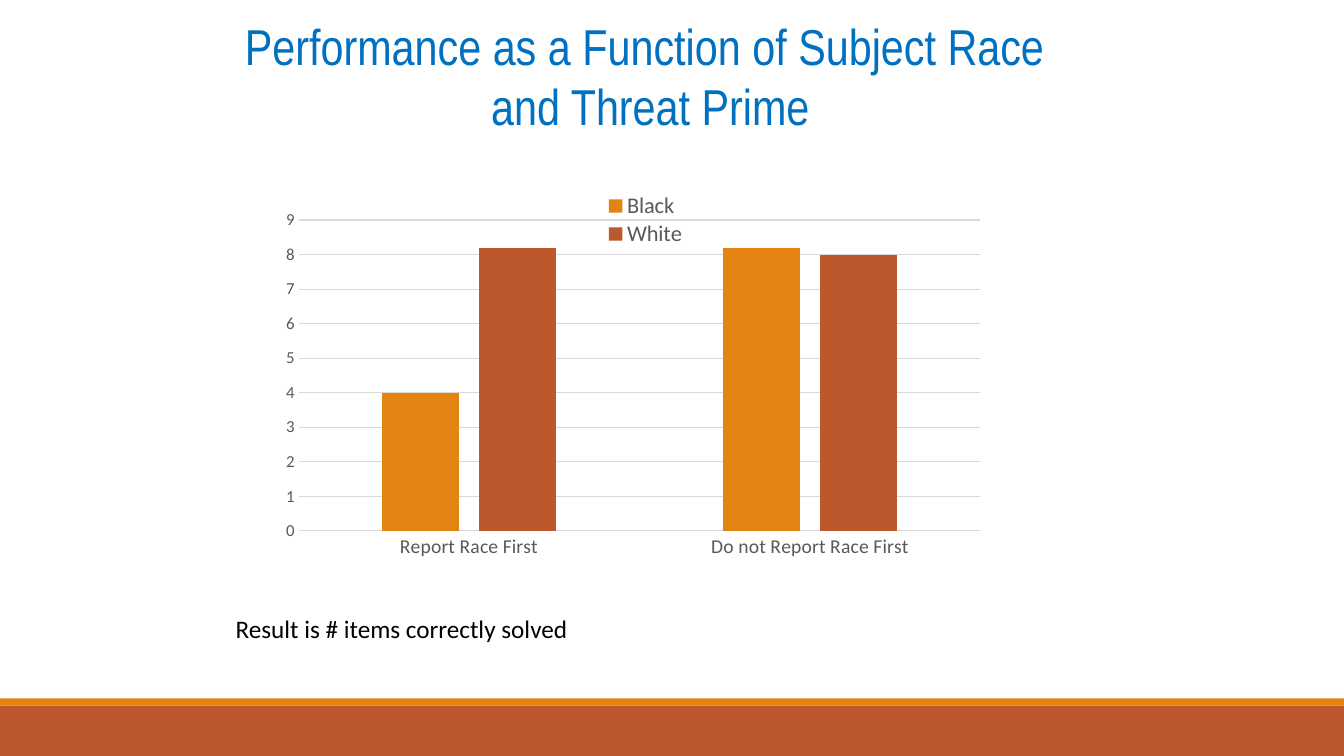
from lxml.etree import SubElement
from pptx import Presentation
from pptx.chart.data import CategoryChartData
from pptx.dml.color import RGBColor
from pptx.enum.chart import XL_CHART_TYPE, XL_LEGEND_POSITION, XL_TICK_MARK
from pptx.enum.shapes import MSO_SHAPE
from pptx.enum.text import MSO_ANCHOR, MSO_AUTO_SIZE, PP_ALIGN
from pptx.oxml.ns import qn
from pptx.util import Cm, Pt

ORANGE, RUST, GREY, GRID = "E48312", "BD582C", "595959", "D9D9D9"
WIDTH, HEIGHT = 33.87, 19.05
CATEGORIES = ["Report Race First", "Do not Report Race First"]
SERIES = [("Black", (4, 8.2), ORANGE), ("White", (8.2, 8), RUST)]


def rgb(code):
    """Turn a hex string into a colour."""
    return RGBColor.from_string(code)


def style(font, size, color, name="Calibri"):
    """Format a font."""
    font.color.rgb = rgb(color)
    for key, value in {"size": Pt(size), "name": name, "bold": False}.items():
        setattr(font, key, value)


def set_frame(tf, anchor):
    """Give a text frame wrapping and its anchor."""
    values = {"word_wrap": True, "auto_size": MSO_AUTO_SIZE.NONE,
              "vertical_anchor": anchor}
    for key, value in values.items():
        setattr(tf, key, value)


def set_layout(element, index, box, inner=False):
    """Place a chart part at fractions of the chart area."""
    old = element.find(qn("c:layout"))
    if old is not None:
        element.remove(old)
    layout = SubElement(element, qn("c:layout"))
    element.insert(index, layout)
    manual = SubElement(layout, qn("c:manualLayout"))
    values = [("layoutTarget", "inner")] if inner else []
    values += [("xMode", "edge"), ("yMode", "edge"), *zip("xywh", box)]
    for tag, value in values:
        SubElement(manual, qn(f"c:{tag}")).set("val", str(value))


def add_title(s, x, y, w, h):
    """Fill the title placeholder with two centred lines."""
    sp = s.shapes.title
    for key, value in {"left": x, "top": y, "width": w, "height": h}.items():
        setattr(sp, key, Cm(value))
    tf = sp.text_frame
    tf.text = "Performance as a Function of Subject Race \nand Threat Prime"
    set_frame(tf, MSO_ANCHOR.TOP)
    for p in tf.paragraphs:
        p.alignment = PP_ALIGN.CENTER
        style(p.runs[0].font, 36, "0070C0", "Arial Narrow")


def add_score_chart(s, x, y, w, h):
    """Add the clustered columns with axes and legend."""
    data = CategoryChartData(number_format="General")
    data.categories = CATEGORIES
    for name, values, _ in SERIES:
        data.add_series(name, values)
    chart = s.shapes.add_chart(XL_CHART_TYPE.COLUMN_CLUSTERED,
                               Cm(x), Cm(y), Cm(w), Cm(h), data).chart
    chart.has_title = False
    style(chart.font, 10, "000000")
    plot = chart.plots[0]
    for key, value in {"gap_width": 219, "overlap": -27,
                       "vary_by_categories": False}.items():
        setattr(plot, key, value)
    for series, (_, _, color) in zip(plot.series, SERIES):
        series.format.fill.solid()
        series.format.fill.fore_color.rgb = rgb(color)
    cat, val = chart.category_axis, chart.value_axis
    for axis, size in ((cat, 14), (val, 12)):
        axis.major_tick_mark = axis.minor_tick_mark = XL_TICK_MARK.NONE
        style(axis.tick_labels.font, size, GREY)
    for key, value in {"minimum_scale": 0, "maximum_scale": 9, "major_unit": 1,
                       "has_major_gridlines": True}.items():
        setattr(val, key, value)
    val.format.line.fill.background()
    for line in (cat.format.line, val.major_gridlines.format.line):
        line.color.rgb = rgb(GRID)
        line.width = Pt(0.75)
    chart.has_legend = True
    legend = chart.legend
    legend.position = XL_LEGEND_POSITION.BOTTOM
    legend.include_in_layout = False
    style(legend.font, 16, GREY)
    set_layout(legend._element, 1, (0.45, 0.05, 0.12, 0.14))
    plot_area = chart._chartSpace.chart.plotArea
    set_layout(plot_area, 0, (0.036, 0.12, 0.932, 0.767), inner=True)


def add_note(s, x, y, w, h):
    """Add the line that explains the measure."""
    tf = s.shapes.add_textbox(Cm(x), Cm(y), Cm(w), Cm(h)).text_frame
    set_frame(tf, MSO_ANCHOR.TOP)
    r = tf.paragraphs[0].add_run()
    r.text = "Result is # items correctly solved"
    style(r.font, 18, "000000")


def add_footer(s, x, y, w, h):
    """Add the thin orange strip above the rust band."""
    strip = 0.18
    for top, height, color in ((y + strip, h - strip, RUST), (y, strip, ORANGE)):
        sp = s.shapes.add_shape(MSO_SHAPE.RECTANGLE,
                                Cm(x), Cm(top), Cm(w), Cm(height))
        sp.shadow.inherit = False
        sp.fill.solid()
        sp.fill.fore_color.rgb = rgb(color)
        sp.line.fill.background()


def main():
    """Build the slide and save it."""
    prs = Presentation()
    prs.slide_width, prs.slide_height = Cm(WIDTH), Cm(HEIGHT)
    s = prs.slides.add_slide(prs.slide_layouts[5])
    add_footer(s, 0, 17.6, WIDTH, HEIGHT - 17.6)
    add_title(s, 2.74, 0.25, 27.3, 3.33)
    add_score_chart(s, 6.86, 4.32, 18.44, 10.21)
    add_note(s, 5.69, 15.34, 20.19, 1.02)
    prs.save("out.pptx")


if __name__ == "__main__":
    main()
